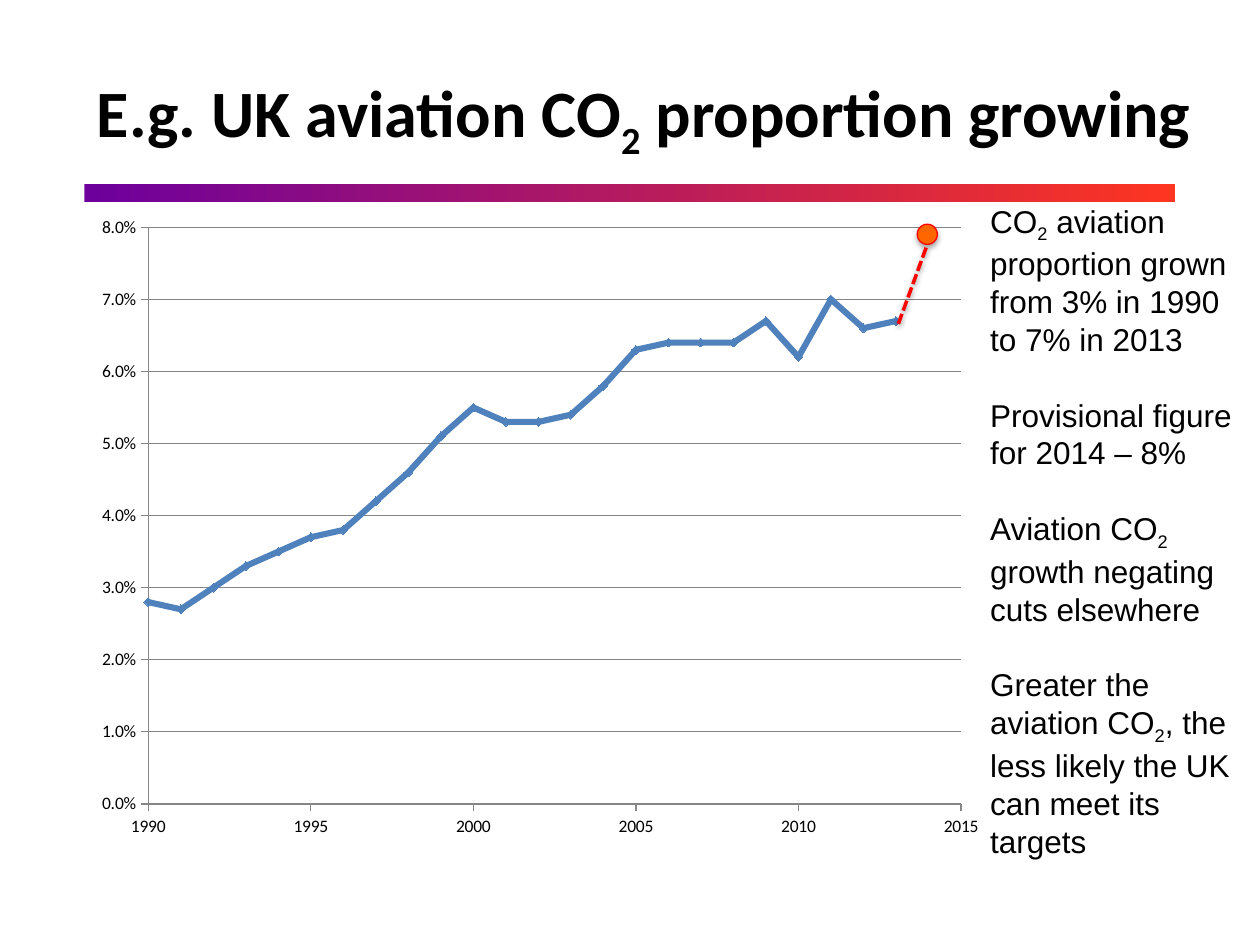
from lxml import etree
from pptx import Presentation
from pptx import util as u
from pptx.chart import data as chart_data
from pptx.dml import color
from pptx.enum import chart as charts, dml, shapes, text
from pptx.oxml import ns, parse_xml

# Content: each text is a list of (words, is_subscript)
TITLE = [("E.g. UK aviation CO", False), ("2", True), (" proportion growing", False)]
NOTES = [
    [("CO", False), ("2", True),
     (" aviation proportion grown from 3% in 1990 to 7% in 2013", False)],
    [("Provisional figure for 2014 – 8%", False)],
    [("Aviation CO", False), ("2", True), (" growth negating cuts elsewhere", False)],
    [("Greater the aviation CO", False), ("2", True),
     (", the less likely the UK can meet its targets", False)],
]
FIRST_YEAR = 1990
SHARES = [0.028, 0.027, 0.03, 0.033, 0.035, 0.037, 0.038, 0.042,
          0.046, 0.051, 0.055, 0.053, 0.053, 0.054, 0.058, 0.063,
          0.064, 0.064, 0.064, 0.067, 0.062, 0.07, 0.066, 0.067]
PLOT_AREA = {"x": 0.07, "y": 0.036, "w": 0.891, "h": 0.894}

THEME = {
    "text": "000000", "bar_start": "6D009D", "bar_end": "FD3521",
    "series": "4F81BD", "grid": "868686", "dot": "FF6600", "forecast": "FF0000",
    "title_font": "Calibri", "notes_font": "Arial",
    "title_size": 37.8, "notes_size": 18, "chart_size": 10, "notes_gap": 21.6,
}


def rgb(name):
    return color.RGBColor.from_string(THEME[name])


def place(left, top, width, height):
    return [u.Inches(value) for value in (left, top, width, height)]


def write_runs(paragraph, parts, font, size, bold=False):
    for words, subscript in parts:
        run = paragraph.add_run()
        run.text = words
        run.font.name, run.font.size, run.font.bold = THEME[font], u.Pt(THEME[size]), bold
        run.font.color.rgb = rgb("text")
        if subscript:
            run.font._element.set("baseline", "-25000")


def add_text(slide, box, anchor):
    frame = slide.shapes.add_textbox(*place(*box)).text_frame
    frame.word_wrap = True
    frame.vertical_anchor = anchor
    return frame


def add_shadow(shape, distance, opacity):
    properties = shape._element.spPr
    for old in properties.findall(ns.qn("a:effectLst")):
        properties.remove(old)
    properties.append(parse_xml(
        f'<a:effectLst {ns.nsdecls("a")}><a:outerShdw blurRad="{u.Pt(3.1)}" '
        f'dist="{u.Pt(distance)}" dir="5400000" rotWithShape="0"><a:srgbClr val="000000">'
        f'<a:alpha val="{opacity * 1000}"/></a:srgbClr></a:outerShdw></a:effectLst>'))


def style_axis(axis, low, high, step, number_format):
    axis.minimum_scale, axis.maximum_scale, axis.major_unit = low, high, step
    axis.major_tick_mark = charts.XL_TICK_MARK.OUTSIDE
    axis.tick_labels.number_format = number_format
    axis.tick_labels.number_format_is_linked = False
    axis.format.line.color.rgb = rgb("grid")
    axis.format.line.width = u.Pt(0.75)


def add_share_chart(slide):
    data = chart_data.XyChartData()
    points = data.add_series("Series 1")
    for year, share in enumerate(SHARES, FIRST_YEAR):
        points.add_data_point(year, share)
    chart = slide.shapes.add_chart(charts.XL_CHART_TYPE.XY_SCATTER_SMOOTH,
                                   *place(0.67, 1.62, 7.24, 5.12), data).chart
    chart.has_legend = chart.has_title = False
    chart.font.name, chart.font.size = THEME["title_font"], u.Pt(THEME["chart_size"])
    chart.font.color.rgb = rgb("text")
    chart.plots[0].vary_by_categories = False

    style_axis(chart.category_axis, FIRST_YEAR, 2015, 5, "General")
    style_axis(chart.value_axis, 0, 0.08, 0.01, "0.0%")
    chart.category_axis.has_major_gridlines = False
    chart.value_axis.has_major_gridlines = True
    grid_line = chart.value_axis.major_gridlines.format.line
    grid_line.color.rgb, grid_line.width = rgb("grid"), u.Pt(0.75)

    series = chart.plots[0].series[0]
    series.smooth = True
    series.format.line.color.rgb, series.format.line.width = rgb("series"), u.Pt(3.5)
    series.marker.style, series.marker.size = charts.XL_MARKER_STYLE.DIAMOND, 5
    series.marker.format.fill.solid()
    series.marker.format.fill.fore_color.rgb = rgb("series")
    series.marker.format.line.color.rgb = rgb("series")

    # Fixed inner plot area, so that the forecast meets the last point
    plot_area = chart._chartSpace.chart.plotArea
    for old in plot_area.findall(ns.qn("c:layout")):
        plot_area.remove(old)
    layout = etree.Element(ns.qn("c:layout"))
    manual = etree.SubElement(layout, ns.qn("c:manualLayout"))
    settings = {"layoutTarget": "inner", "xMode": "edge", "yMode": "edge", **PLOT_AREA}
    for tag, value in settings.items():
        etree.SubElement(manual, ns.qn(f"c:{tag}")).set("val", str(value))
    plot_area.insert(0, layout)


def main():
    presentation = Presentation()
    presentation.slide_width, presentation.slide_height = u.Inches(10), u.Inches(7.5)
    slide = presentation.slides.add_slide(presentation.slide_layouts[6])

    # Gradient rule under the title
    bar = slide.shapes.add_shape(shapes.MSO_SHAPE.RECTANGLE, *place(0.67, 1.46, 8.66, 0.14))
    bar.shadow.inherit = False
    bar.line.fill.background()
    bar.fill.gradient()
    bar.fill.gradient_angle = 0
    for stop, name, position in zip(bar.fill.gradient_stops, ("bar_start", "bar_end"), (0, 1)):
        stop.color.rgb, stop.position = rgb(name), position

    # Title
    title = add_text(slide, (0.67, 0.3, 9.33, 1.25), text.MSO_ANCHOR.MIDDLE)
    write_runs(title.paragraphs[0], TITLE, "title_font", "title_size", bold=True)

    add_share_chart(slide)

    # Notes beside the chart
    notes = add_text(slide, (7.76, 1.55, 2.24, 5.25), text.MSO_ANCHOR.TOP)
    for index, parts in enumerate(NOTES):
        paragraph = notes.add_paragraph() if index else notes.paragraphs[0]
        if index:
            paragraph.space_before = u.Pt(THEME["notes_gap"])
        write_runs(paragraph, parts, "notes_font", "notes_size")

    # Provisional 2014 point and the dashed line to it
    dot = slide.shapes.add_shape(shapes.MSO_SHAPE.OVAL, *place(7.28, 1.78, 0.16, 0.16))
    dot.fill.solid()
    dot.fill.fore_color.rgb = rgb("dot")
    dot.line.color.rgb, dot.line.width = rgb("forecast"), u.Pt(0.75)
    add_shadow(dot, 1.8, 35)

    forecast = slide.shapes.add_connector(shapes.MSO_CONNECTOR.STRAIGHT,
                                          *place(7.13, 2.57, 7.36, 1.94))
    forecast.line.color.rgb, forecast.line.width = rgb("forecast"), u.Pt(2)
    forecast.line.dash_style = dml.MSO_LINE.SQUARE_DOT
    add_shadow(forecast, 1.6, 38)

    presentation.save("out.pptx")


if __name__ == "__main__":
    main()
